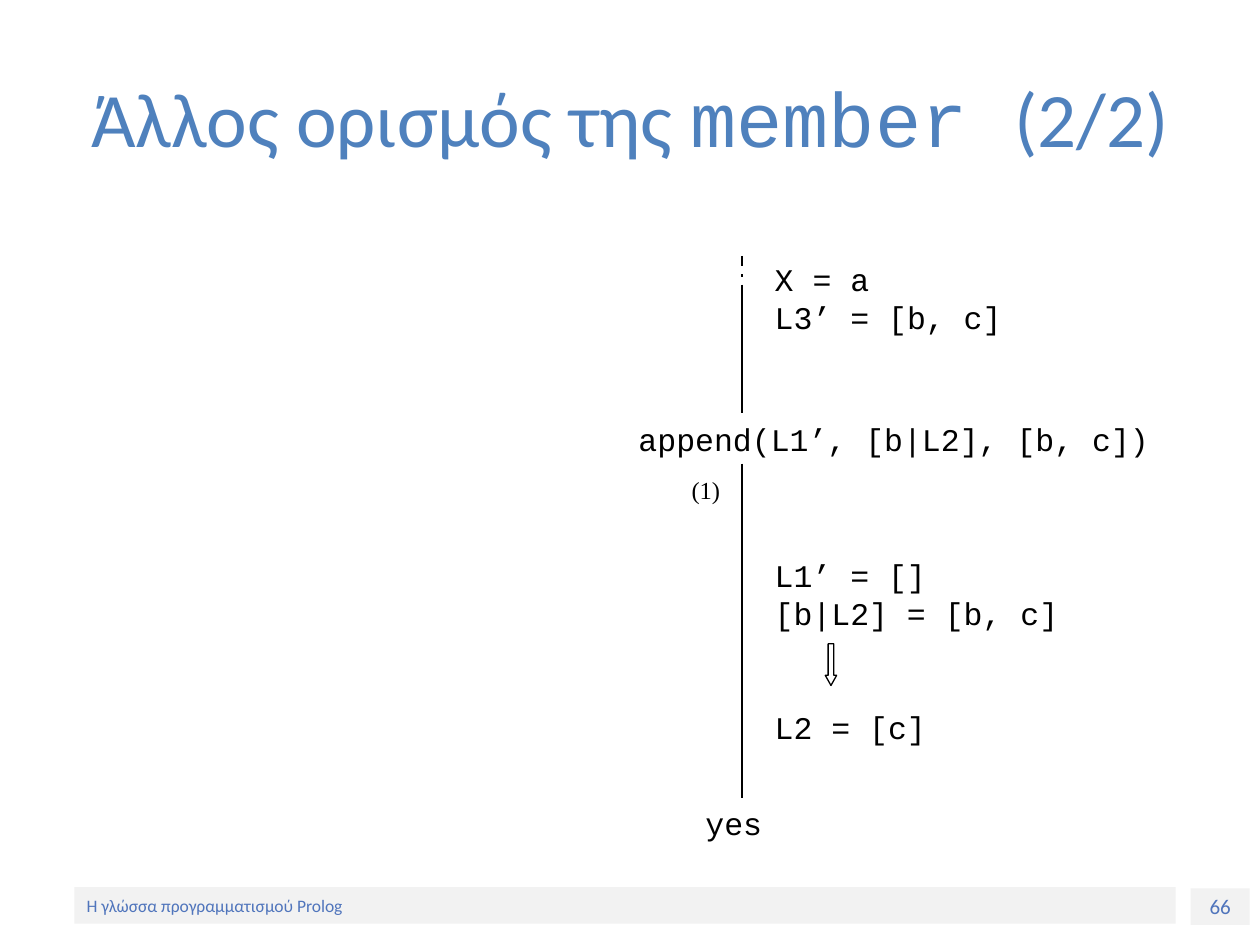
from dataclasses import dataclass

from lxml import etree
from pptx import Presentation
from pptx.dml.color import RGBColor
from pptx.enum.dml import MSO_LINE
from pptx.enum.shapes import MSO_CONNECTOR, MSO_SHAPE
from pptx.enum.text import MSO_ANCHOR, PP_ALIGN
from pptx.oxml.ns import qn
from pptx.util import Pt

LEFT, CENTER = PP_ALIGN.LEFT, PP_ALIGN.CENTER
TOP, MIDDLE = MSO_ANCHOR.TOP, MSO_ANCHOR.MIDDLE
RECTANGLE, DOWN_ARROW = MSO_SHAPE.RECTANGLE, MSO_SHAPE.DOWN_ARROW
STRAIGHT = MSO_CONNECTOR.STRAIGHT
SOLID, DASH_DOT = MSO_LINE.SOLID, MSO_LINE.DASH_DOT

SANS, MONO, SERIF = "Calibri", "Courier New", "Times New Roman"
BLACK, TITLE_BLUE, FOOTER_BLUE, BAND_GREY = "000000", "4F81BD", "5075BC", "F2F2F2"
BRANCH_X = 424
BINDING_X = 435.6
CODE_LEADING = 21.7


@dataclass
class Box:
    left: float
    top: float
    width: float
    height: float

    def lengths(self):
        return Pt(self.left), Pt(self.top), Pt(self.width), Pt(self.height)


@dataclass
class Goal:
    box: Box
    lines: list[str]
    gap_lines: int = 0


@dataclass
class Branch:
    top: float
    bottom: float
    dash: MSO_LINE = SOLID


@dataclass
class Band:
    box: Box
    text: str
    size: float
    align: PP_ALIGN


def color(value: str) -> RGBColor:
    return RGBColor.from_string(value)


def write(frame, lines, *, size, ink=BLACK, align=LEFT, anchor=TOP,
          leading=None, last_gap=0):
    frame.word_wrap = True
    frame.vertical_anchor = anchor
    for index, runs in enumerate(lines):
        paragraph = frame.add_paragraph() if index else frame.paragraphs[0]
        paragraph.alignment = align
        if leading:
            paragraph.line_spacing = Pt(leading)
        if last_gap and index == len(lines) - 1:
            paragraph.space_before = Pt(last_gap)
        for text, face in runs:
            run = paragraph.add_run()
            run.text = text
            run.font.name = face
            run.font.size = Pt(size)
            run.font.color.rgb = color(ink)


def add_text(slide, box: Box, lines, **text_format):
    write(slide.shapes.add_textbox(*box.lengths()).text_frame, lines, **text_format)


def draw_band(slide, band: Band):
    bar = slide.shapes.add_shape(RECTANGLE, *band.box.lengths())
    bar.shadow.inherit = False
    bar.fill.solid()
    bar.fill.fore_color.rgb = color(BAND_GREY)
    bar.line.fill.background()
    write(bar.text_frame, [[(band.text, SANS)]], size=band.size,
          ink=FOOTER_BLUE, align=band.align, anchor=MIDDLE)


def draw_goal(slide, goal: Goal):
    add_text(slide, goal.box, [[(line, MONO)] for line in goal.lines], size=18,
             leading=CODE_LEADING, last_gap=goal.gap_lines * CODE_LEADING)


def draw_branch(slide, branch: Branch):
    edge = slide.shapes.add_connector(
        STRAIGHT, Pt(BRANCH_X), Pt(branch.top), Pt(BRANCH_X), Pt(branch.bottom))
    edge.line.color.rgb = color(BLACK)
    edge.line.width = Pt(1.5)
    edge.line.dash_style = branch.dash
    properties = edge.element.find(qn("p:spPr"))
    etree.SubElement(properties, qn("a:effectLst"))


def draw_implication(slide, box: Box):
    implication = slide.shapes.add_shape(DOWN_ARROW, *box.lengths())
    implication.shadow.inherit = False
    implication.adjustments[0] = 0.5
    implication.adjustments[1] = 0.89
    implication.fill.background()
    implication.line.color.rgb = color(BLACK)
    implication.line.width = Pt(0.75)


BANDS = [
    Band(Box(680.4, 507.6, 33.8, 20.9), "66", 12, CENTER),
    Band(Box(42.5, 506.9, 629.3, 20.9), "Η γλώσσα προγραμματισμού Prolog", 10, LEFT),
]
BRANCHES = [Branch(146.2, 168.5, DASH_DOT), Branch(167, 236.2), Branch(265, 455.8)]
GOALS = [
    Goal(Box(BINDING_X, 144.7, 188.6, 51), ["X = a", "L3’ = [b, c]"]),
    Goal(Box(357.8, 236.2, 326.2, 28.8), ["append(L1’, [b|L2], [b, c])"]),
    Goal(Box(BINDING_X, 313.9, 177.8, 116.6),
         ["L1’ = []", "[b|L2] = [b, c]", "L2 = [c]"], gap_lines=2),
    Goal(Box(396, 455.8, 79.2, 28.8), ["yes"]),
]


def main():
    deck = Presentation()
    deck.slide_width, deck.slide_height = Pt(720), Pt(540)
    slide = deck.slides.add_slide(deck.slide_layouts[6])
    for band in BANDS:
        draw_band(slide, band)
    add_text(slide, Box(36, 21.6, 648, 90),
             [[("Άλλος ορισμός της ", SANS), ("member ", MONO), ("(2/2)", SANS)]],
             size=44, ink=TITLE_BLUE, align=CENTER, anchor=MIDDLE)
    for branch in BRANCHES:
        draw_branch(slide, branch)
    for goal in GOALS:
        draw_goal(slide, goal)
    add_text(slide, Box(388.1, 267.8, 42.5, 24.5), [[("(1)", SERIF)]], size=14)
    draw_implication(slide, Box(471.6, 367.9, 6.5, 23.8))
    deck.save("out.pptx")


if __name__ == "__main__":
    main()
